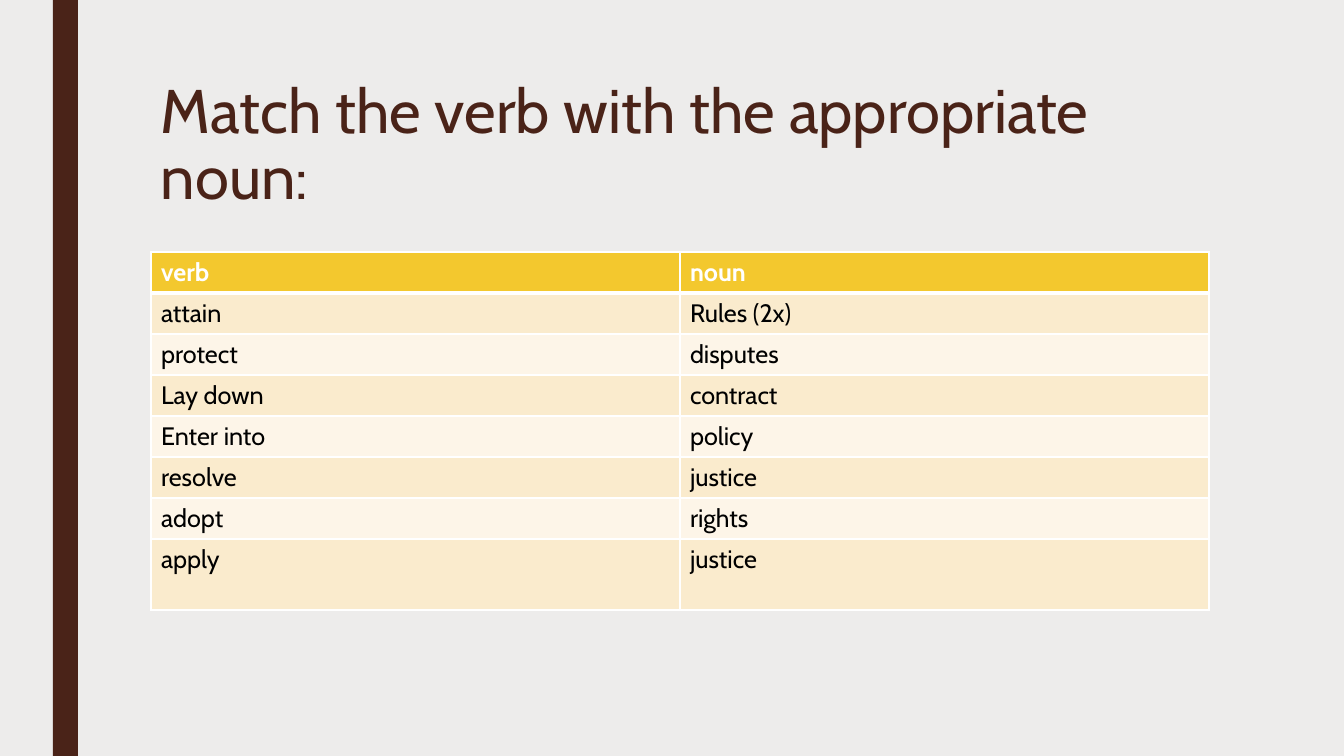
from dataclasses import dataclass

from lxml import etree
from pptx import Presentation
from pptx.dml.color import RGBColor
from pptx.enum.shapes import MSO_SHAPE
from pptx.enum.text import MSO_ANCHOR
from pptx.oxml.ns import qn
from pptx.util import Emu, Pt

RECTANGLE = MSO_SHAPE.RECTANGLE
TOP = MSO_ANCHOR.TOP

FONT = "Cabin"
BACKGROUND = RGBColor(0xED, 0xEC, 0xEB)
BROWN = RGBColor(0x4A, 0x23, 0x18)
GOLD = RGBColor(0xF3, 0xC8, 0x2E)
DARK_BAND = RGBColor(0xFA, 0xEB, 0xCD)
LIGHT_BAND = RGBColor(0xFD, 0xF5, 0xE8)
WHITE = RGBColor(0xFF, 0xFF, 0xFF)
BLACK = RGBColor(0x00, 0x00, 0x00)

PX_PER_INCH = 100.8
SLIDE_WIDTH, SLIDE_HEIGHT = 1344, 756
COLUMN_WIDTH = 529
ROW_HEIGHT, LAST_ROW_HEIGHT = 41, 71
THIN, THICK = Pt(1), Pt(3)


@dataclass(frozen=True)
class WordPair:
    verb: str
    noun: str


HEADER = WordPair("verb", "noun")
PAIRS = [
    WordPair("attain", "Rules (2x)"),
    WordPair("protect", "disputes"),
    WordPair("Lay down", "contract"),
    WordPair("Enter into", "policy"),
    WordPair("resolve", "justice"),
    WordPair("adopt", "rights"),
    WordPair("apply", "justice"),
]


def px(length: int) -> Emu:
    return Emu(round(length * 914400 / PX_PER_INCH))


def set_font(paragraph, size: int, color: RGBColor, bold: bool = False) -> None:
    font = paragraph.font
    font.name, font.size, font.bold = FONT, Pt(size), bold
    font.color.rgb = color


def add_borders(cell, top: int, bottom: int) -> None:
    properties = cell._tc.get_or_add_tcPr()
    widths = {"a:lnL": THIN, "a:lnR": THIN, "a:lnT": top, "a:lnB": bottom}
    for tag, width in widths.items():
        line = etree.SubElement(properties, qn(tag), w=str(width))
        fill = etree.SubElement(line, qn("a:solidFill"))
        etree.SubElement(fill, qn("a:srgbClr"), val=str(WHITE))


def add_side_bar(slide) -> None:
    bar = slide.shapes.add_shape(RECTANGLE, px(53), 0, px(25), px(SLIDE_HEIGHT))
    bar.shadow.inherit = False
    bar.fill.solid()
    bar.fill.fore_color.rgb = BROWN
    bar.line.fill.background()


def add_title(slide, text: str) -> None:
    title = slide.shapes.add_textbox(px(151), px(76), px(1058), px(163)).text_frame
    title.word_wrap = True
    title.vertical_anchor = TOP
    paragraph = title.paragraphs[0]
    paragraph.text = text
    paragraph.line_spacing = 0.89
    set_font(paragraph, 44, BROWN)


def add_word_table(slide, pairs: list[WordPair]) -> None:
    rows = [HEADER, *pairs]
    height = ROW_HEIGHT * len(pairs) + LAST_ROW_HEIGHT
    table = slide.shapes.add_table(
        len(rows), 2, px(151), px(252), px(2 * COLUMN_WIDTH), px(height)
    ).table
    for column in table.columns:
        column.width = px(COLUMN_WIDTH)
    for index, pair in enumerate(rows):
        is_header = index == 0
        is_last = index == len(rows) - 1
        table.rows[index].height = px(LAST_ROW_HEIGHT if is_last else ROW_HEIGHT)
        band = DARK_BAND if index % 2 else LIGHT_BAND
        for cell, word in zip(table.rows[index].cells, (pair.verb, pair.noun)):
            # The thick rule lies between the header and the first pair
            add_borders(
                cell,
                top=THICK if index == 1 else THIN,
                bottom=THICK if is_header else THIN,
            )
            cell.fill.solid()
            cell.fill.fore_color.rgb = GOLD if is_header else band
            cell.text = word
            color = WHITE if is_header else BLACK
            set_font(cell.text_frame.paragraphs[0], 18, color, is_header)


def main() -> None:
    presentation = Presentation()
    presentation.slide_width = px(SLIDE_WIDTH)
    presentation.slide_height = px(SLIDE_HEIGHT)
    slide = presentation.slides.add_slide(presentation.slide_layouts[6])

    # Background and side bar
    slide.background.fill.solid()
    slide.background.fill.fore_color.rgb = BACKGROUND
    add_side_bar(slide)

    # Exercise
    add_title(slide, "Match the verb with the appropriate noun:")
    add_word_table(slide, PAIRS)

    presentation.save("out.pptx")


if __name__ == "__main__":
    main()
